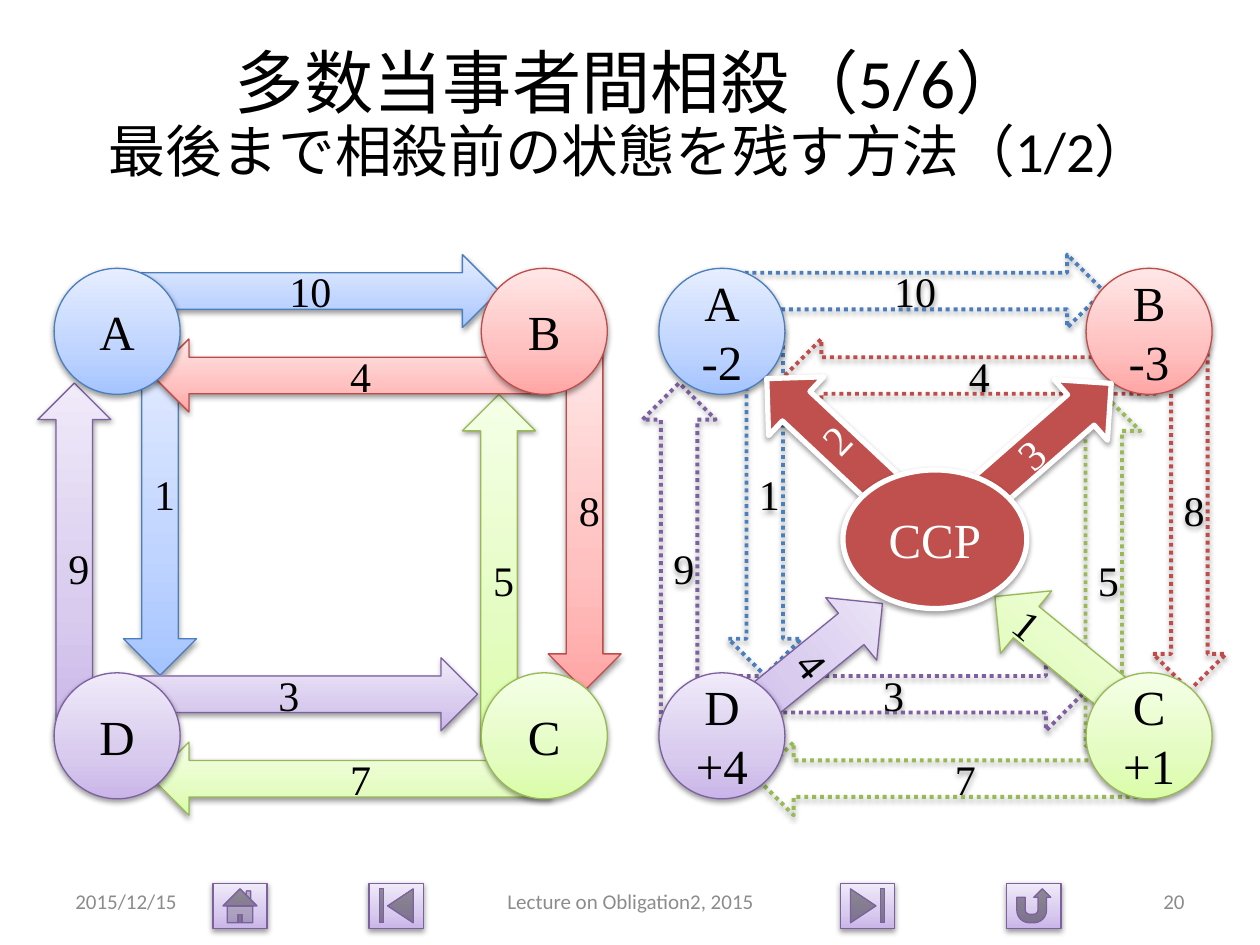
from copy import deepcopy
from dataclasses import dataclass, replace
from typing import Any

from lxml import etree
from pptx import Presentation, util as u
from pptx.dml.color import RGBColor
from pptx.enum import dml, shapes, text
from pptx.oxml.ns import qn

COLS, ROWS = 10, 7.5
SHIFT = 4.8  # columns between the left and the right ring
KIND = shapes.MSO_SHAPE
ALIGN = text.PP_ALIGN
UP, DOWN = KIND.UP_ARROW, KIND.DOWN_ARROW
LEFT, RIGHT = KIND.LEFT_ARROW, KIND.RIGHT_ARROW


@dataclass(frozen=True)
class Tone:
    fill: tuple[str, ...]
    edge: str
    width: float = 0.75
    ink: str = "000000"
    dash: Any = None

    def ghost(self) -> "Tone":
        """The same edge, dotted and without a fill."""
        return replace(self, fill=(), width=2.25, dash=dml.MSO_LINE.ROUND_DOT)


@dataclass(frozen=True)
class Theme:
    blue: Tone = Tone(("A4C4FF", "BFD4FF", "E6EEFF"), "4B7EBC")
    red: Tone = Tone(("FFA6A5", "FFC0BF", "FFE7E7"), "BF4C48")
    green: Tone = Tone(("DAFDA7", "E4FCC2", "F5FFE7"), "98B955")
    violet: Tone = Tone(("C9B5E8", "D8CBEE", "F0EAF9"), "7D60A0")
    hub: Tone = Tone(("C0504D",), "FFFFFF", 3, "FFFFFF")
    ink: str = "000000"
    grey: str = "8C8C8C"
    serif: str = "Times New Roman"
    sans: str = "Calibri"
    title: float = 39.6
    sub: float = 32.4
    node: float = 28
    flow: float = 24
    foot: float = 12


@dataclass(frozen=True)
class Box:
    col: float
    row: float
    wide: float
    high: float


@dataclass(frozen=True)
class Item:
    kind: Any
    box: Box
    tone: Tone
    label: str = ""
    size: float = 24
    turn: float = 0
    align: Any = ALIGN.CENTER


T = Theme()
GIRTH = 0.58
FLOWS = [
    Item(DOWN, Box(0.98, 2.63, GIRTH, 2.73), T.blue, "1"),
    Item(UP, Box(0.3, 3.04, GIRTH, 2.79), T.violet, "9"),
    Item(RIGHT, Box(0.94, 5.22, 2.85, GIRTH), T.violet, "3"),
    Item(LEFT, Box(1.21, 5.89, 3.16, GIRTH), T.green, "7"),
    Item(UP, Box(3.67, 3.13, GIRTH, 2.79), T.green, "5"),
    Item(DOWN, Box(4.35, 2.75, GIRTH, 2.73), T.red, "8"),
    Item(LEFT, Box(1.21, 2.69, 3.16, GIRTH), T.red, "4"),
    Item(RIGHT, Box(1.11, 2.02, 2.85, GIRTH), T.blue, "10"),
]
SHORT = Box(1.43, 2.69, 2.94, GIRTH)  # flow 4 on the right starts at the edge of A
NODES = [
    Item(KIND.OVAL, Box(col, row, 1, 1), tone, name, T.node)
    for name, col, row, tone in [
        ("A", 0.43, 2.13, T.blue), ("B", 3.82, 2.13, T.red),
        ("C", 3.82, 5.34, T.green), ("D", 0.43, 5.34, T.violet)]
]
NET = ["-2", "-3", "+1", "+4"]
SPOKES = [
    Item(UP, Box(6.24, 2.8, 0.64, 1.3), T.hub, "2", turn=313.2),
    Item(RIGHT, Box(7.47, 3.23, 1.54, 0.64), T.hub, "3", turn=318.8),
    Item(UP, Box(6.18, 4.55, 0.64, 1.3), T.violet, "4", turn=50.8, align=ALIGN.LEFT),
    Item(LEFT, Box(7.73, 4.88, 1.47, 0.64), T.green, "1", turn=39.3, align=ALIGN.LEFT),
    Item(KIND.OVAL, Box(6.69, 3.73, 1.46, 1.1), T.hub, "CCP", T.node),
]
KEYS = [(1.69, KIND.ACTION_BUTTON_HOME), (2.93, KIND.ACTION_BUTTON_BEGINNING),
        (6.67, KIND.ACTION_BUTTON_END), (7.99, KIND.ACTION_BUTTON_RETURN)]
FOOTS = [(0.5, 2.33, "2015/12/15", ALIGN.LEFT),
         (3.42, 3.17, "Lecture on Obligation2, 2015", ALIGN.CENTER),
         (7.17, 2.33, "20", ALIGN.RIGHT)]


def put(thing: Any, vals: dict[str, Any]) -> None:
    for name, val in vals.items():
        setattr(thing, name, val)


def place(box: Box) -> list[int]:
    return [u.Inches(v) for v in (box.col, box.row, box.wide, box.high)]


def paint(shape: Any, tone: Tone) -> None:
    fill = shape.fill
    if len(tone.fill) > 1:
        fill.gradient()
        fill.gradient_angle = 90
        stops = shape._element.spPr.find(".//" + qn("a:gsLst"))
        stops.insert(1, deepcopy(stops[0]))
        for stop, share, shade in zip(fill.gradient_stops, (0, 0.35, 1), tone.fill):
            stop.position = share
            stop.color.rgb = RGBColor.from_string(shade)
    elif tone.fill:
        fill.solid()
        fill.fore_color.rgb = RGBColor.from_string(tone.fill[0])
    else:
        fill.background()
    shape.line.color.rgb = RGBColor.from_string(tone.edge)
    put(shape.line, {"width": u.Pt(tone.width), "dash_style": tone.dash})


def shade(shape: Any) -> None:
    """Add a soft drop shadow below the shape."""
    shape.shadow.inherit = False
    holder = shape._element.spPr.find(qn("a:effectLst"))
    drop = etree.SubElement(holder, qn("a:outerShdw"), blurRad="40000",
                            dist="20000", dir="5400000", rotWithShape="0")
    tint = etree.SubElement(drop, qn("a:srgbClr"), val="000000")
    etree.SubElement(tint, qn("a:alpha"), val="38000")


def style(run: Any, face: str, size: float, ink: str) -> None:
    put(run.font, {"name": face, "size": u.Pt(size)})
    run.font.color.rgb = RGBColor.from_string(ink)


def draw(slide: Any, item: Item) -> None:
    shape = slide.shapes.add_shape(item.kind, *place(item.box))
    shape.rotation = item.turn
    paint(shape, item.tone)
    shade(shape)
    if not item.label:
        return
    frame = shape.text_frame
    put(frame, {"text": item.label, "word_wrap": True,
                "vertical_anchor": text.MSO_ANCHOR.MIDDLE})
    for para in frame.paragraphs:
        para.alignment = item.align
        style(para.runs[0], T.serif, item.size, item.tone.ink)


def write(slide: Any, box: Box, lines: list[tuple[str, float]], align: Any,
          ink: str, gap: float = 1) -> None:
    frame = slide.shapes.add_textbox(*place(box)).text_frame
    put(frame, {"word_wrap": True, "vertical_anchor": text.MSO_ANCHOR.MIDDLE})
    para = frame.paragraphs[0]
    put(para, {"alignment": align, "line_spacing": gap})
    for i, (words, size) in enumerate(lines):
        if i:
            para.add_line_break()
        run = para.add_run()
        run.text = words
        style(run, T.sans, size, ink)


def move(item: Item) -> Item:
    return replace(item, box=replace(item.box, col=item.box.col + SHIFT))


def main() -> None:
    deck = Presentation()
    put(deck, {"slide_width": u.Inches(COLS), "slide_height": u.Inches(ROWS)})
    slide = deck.slides.add_slide(deck.slide_layouts[6])

    keys = [Item(kind, Box(col, 7.01, 0.43, 0.36), T.violet) for col, kind in KEYS]
    ghosts = [move(replace(f, tone=f.tone.ghost(), box=SHORT if f.label == "4" else f.box))
              for f in FLOWS]
    sums = [move(replace(n, label=f"{n.label}\n{net}")) for n, net in zip(NODES, NET)]

    for item in keys:
        draw(slide, item)
    write(slide, Box(0.5, 0.3, 9, 1.25),
          [("多数当事者間相殺（5/6）", T.title),
           ("最後まで相殺前の状態を残す方法（1/2）", T.sub)],
          ALIGN.CENTER, T.ink, 0.9)
    for col, wide, words, align in FOOTS:
        write(slide, Box(col, 6.95, wide, 0.4), [(words, T.foot)], align, T.grey)
    for item in FLOWS + NODES + ghosts + sums[:2] + SPOKES + sums[2:]:
        draw(slide, item)
    deck.save("out.pptx")


if __name__ == "__main__":
    main()
